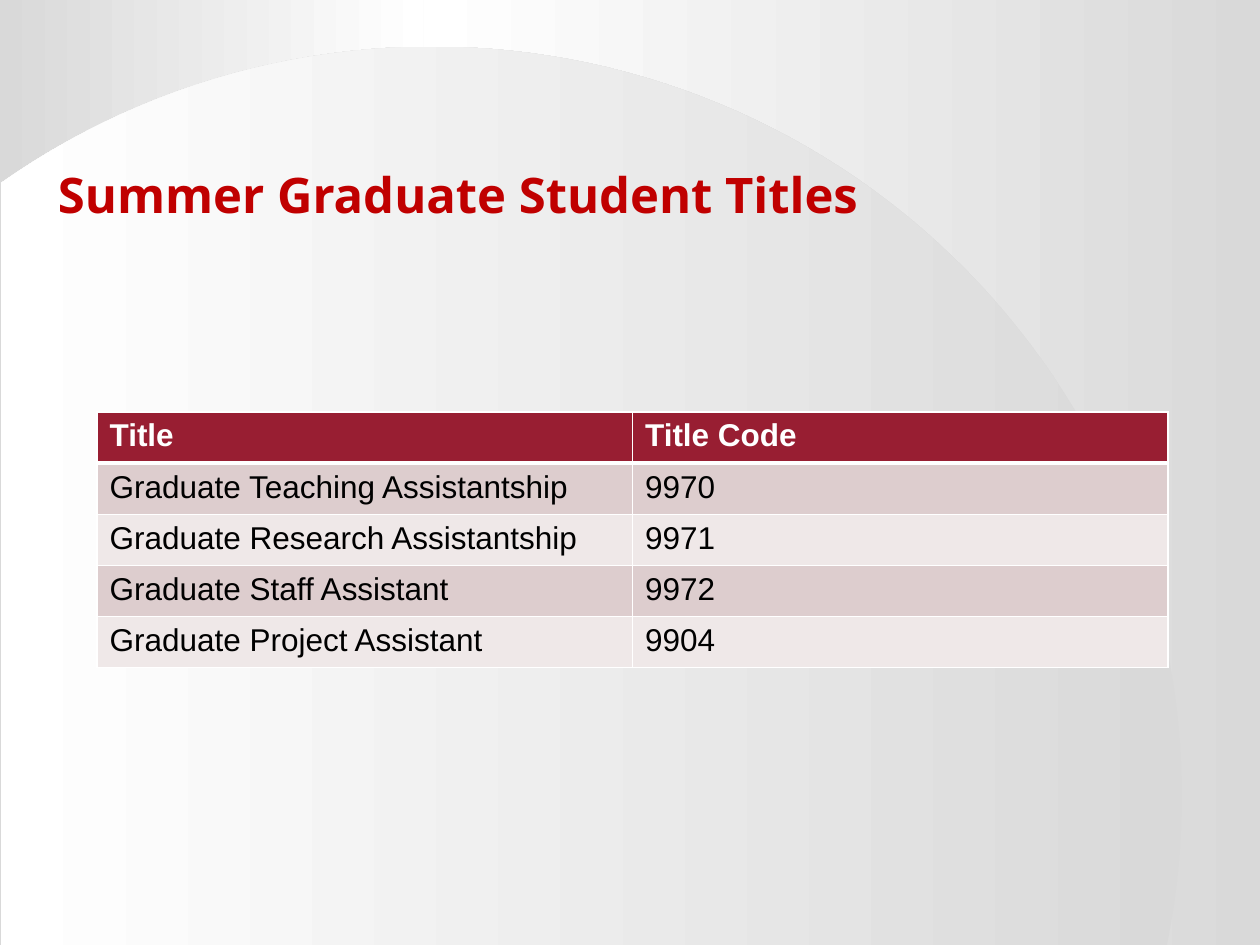
import math

import pptx
import pptx.dml.color
import pptx.enum.shapes
import pptx.enum.text
import pptx.oxml
import pptx.oxml.ns
import pptx.util
from pptx.util import Inches


def color(value):
    return pptx.dml.color.RGBColor.from_string(value)


def shade(shape, angle):
    """Fill a borderless shape with a grey-to-white gradient."""
    shape.shadow.inherit = False
    shape.line.fill.background()
    shape.fill.gradient()
    shape.fill.gradient_angle = angle
    for stop, value in zip(shape.fill.gradient_stops, ("D9D9D9", "FFFFFF")):
        stop.color.rgb = color(value)


presentation = pptx.Presentation()
presentation.slide_width = Inches(10)
presentation.slide_height = Inches(7.5)
slide = presentation.slides.add_slide(presentation.slide_layouts[5])

# Background panels
for left, width, angle in ((0, 3.38, 0), (3.36, 6.64, 180)):
    panel = slide.shapes.add_shape(
        pptx.enum.shapes.MSO_SHAPE.RECTANGLE,
        Inches(left), Inches(0), Inches(width), Inches(7.5))
    shade(panel, angle)

# Large disc, cut off by the left and bottom edges
center_x, center_y, radius = 3.43, 6.32, 5.95
disc_left, disc_bottom = 0.01, 7.5
start = math.pi - math.acos((center_x - disc_left) / radius)
end = -math.asin((disc_bottom - center_y) / radius)
steps = 90
points = [(disc_left, disc_bottom)]
for step in range(steps + 1):
    angle = start + (end - start) * step / steps
    points.append((center_x + radius * math.cos(angle),
                   center_y - radius * math.sin(angle)))
points = [(Inches(x), Inches(y)) for x, y in points]
builder = slide.shapes.build_freeform(*points[0])
builder.add_line_segments(points[1:], close=True)
shade(builder.convert_to_shape(), 180)

# Title, brought in front of the background
title = slide.shapes.title
slide.shapes._spTree.append(title._element)
title.left, title.top = Inches(0.36), Inches(1.31)
title.width, title.height = Inches(8.5), Inches(0.52)
title.text_frame.text = "Summer Graduate Student Titles"
title.text_frame.word_wrap = True
title.text_frame.auto_size = pptx.enum.text.MSO_AUTO_SIZE.SHAPE_TO_FIT_TEXT
title.text_frame.vertical_anchor = pptx.enum.text.MSO_ANCHOR.BOTTOM
paragraph = title.text_frame.paragraphs[0]
paragraph.alignment = pptx.enum.text.PP_ALIGN.LEFT
paragraph.line_spacing = 0.9
paragraph.font.name = "Noto Sans"
paragraph.font.size = pptx.util.Pt(28)
paragraph.font.bold = True
paragraph.font.color.rgb = color("C00000")

# Table of title codes
rows = (
    ("Title", "Title Code"),
    ("Graduate Teaching Assistantship", "9970"),
    ("Graduate Research Assistantship", "9971"),
    ("Graduate Staff Assistant", "9972"),
    ("Graduate Project Assistant", "9904"),
)
table = slide.shapes.add_table(
    len(rows), 2, Inches(0.77), Inches(3.27), Inches(8.5), Inches(2.03)).table
for row_index, row in enumerate(rows):
    header = row_index == 0
    fill = "981E32" if header else ("EFE8E8", "DDCDCE")[row_index % 2]
    for column_index, text in enumerate(row):
        cell = table.cell(row_index, column_index)
        cell.text = text
        cell.fill.solid()
        cell.fill.fore_color.rgb = color(fill)
        paragraph = cell.text_frame.paragraphs[0]
        paragraph.font.name = "Arial"
        paragraph.font.size = pptx.util.Pt(18)
        paragraph.font.bold = header
        paragraph.font.color.rgb = color("FFFFFF" if header else "000000")

        # White cell borders, heavier around the header's lower edge
        widths = {"lnL": 1, "lnR": 1,
                  "lnT": 3 if row_index == 1 else 1,
                  "lnB": 3 if header else 1}
        properties = cell._tc.get_or_add_tcPr()
        for position, (side, width) in enumerate(widths.items()):
            border = pptx.oxml.parse_xml(
                f'<a:{side} {pptx.oxml.ns.nsdecls("a")} w="{pptx.util.Pt(width)}">'
                '<a:solidFill><a:srgbClr val="FFFFFF"/></a:solidFill>'
                f'</a:{side}>')
            properties.insert(position, border)

presentation.save("out.pptx")
